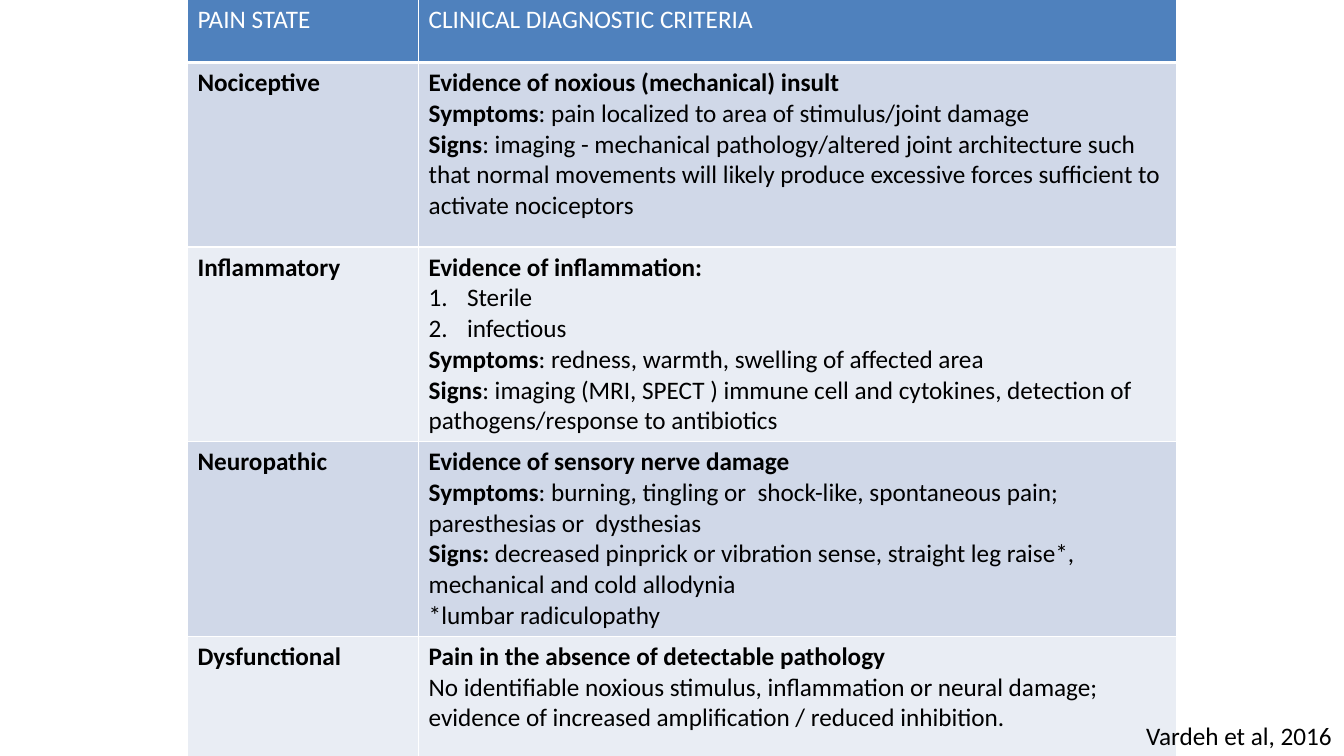
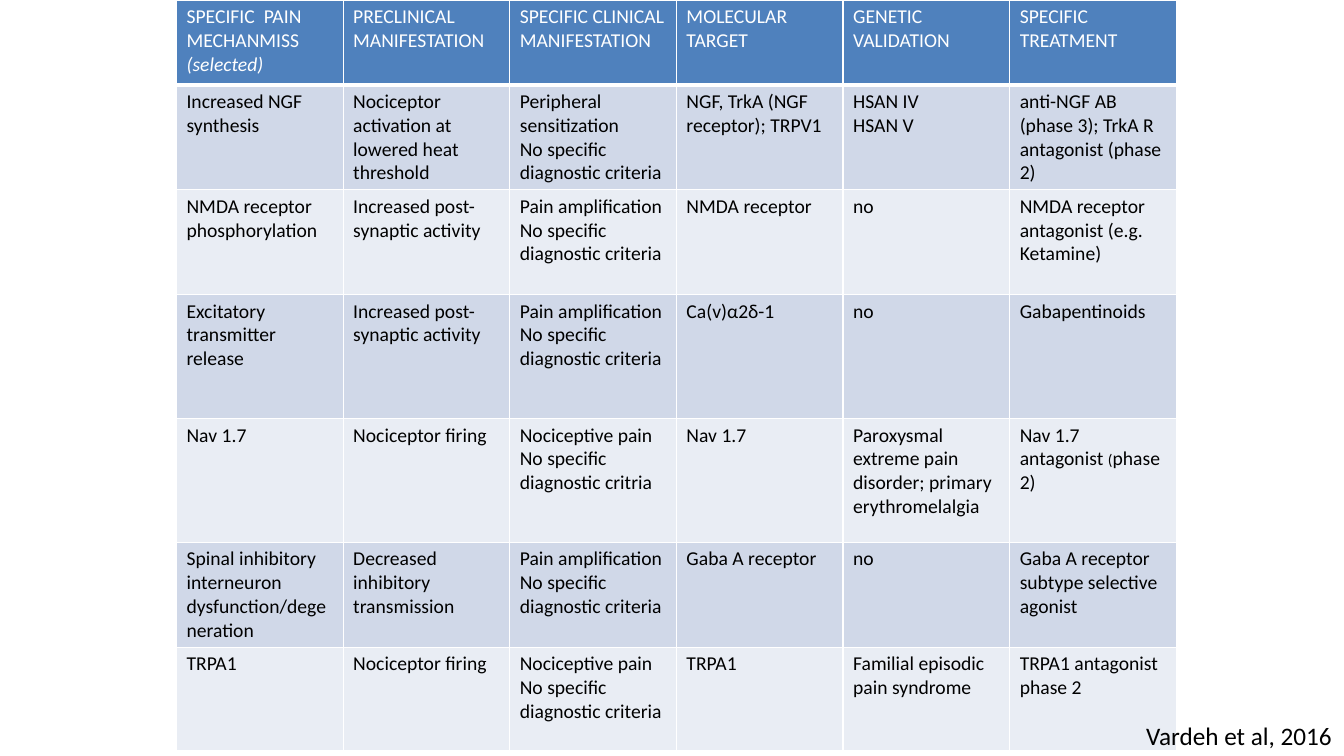
"""Build two slides of pain tables: diagnostic criteria and mechanisms."""
from lxml import etree
from pptx import Presentation
from pptx import util as u
from pptx.dml.color import RGBColor
from pptx.enum import text
from pptx.oxml import ns

COLORS = {"header": "4F81BD", "odd": "D0D8E8", "even": "E9EDF4",
          "rule": "FFFFFF", "header_text": "FFFFFF", "body_text": "000000"}
FONT = "Calibri"
WIDTH, HEIGHT = u.Inches(13.33), u.Inches(7.5)
BOLD, ITALIC, SMALL = {"bold": True}, {"italic": True}, {"size": u.Pt(11)}
NO_CRITERIA = "No specific diagnostic criteria"
AMPLIFICATION = ["Pain amplification", NO_CRITERIA]

CRITERIA = [
    ["PAIN STATE", "CLINICAL DIAGNOSTIC CRITERIA"],
    [[("Nociceptive", BOLD)], [
        ("Evidence of noxious (mechanical) insult", BOLD),
        [("Symptoms", BOLD), ": pain localized to area of stimulus/joint damage"],
        [("Signs", BOLD), ": imaging - mechanical pathology/altered joint architecture "
         "such that normal movements will likely produce excessive forces sufficient to "
         "activate nociceptors"]]],
    [[("Inflammatory", BOLD)], [
        ("Evidence of inflammation:", BOLD),
        ("Sterile", {"numbered": True}),
        ("infectious", {"numbered": True}),
        [("Symptoms", BOLD), ": redness, warmth, swelling of affected area"],
        [("Signs", BOLD), ": imaging (MRI, SPECT ) immune cell and cytokines, "
         "detection of pathogens/response to antibiotics"]]],
    [[("Neuropathic", BOLD)], [
        ("Evidence of sensory nerve damage", BOLD),
        [("Symptoms", BOLD), ": burning, tingling or  shock-like, spontaneous pain; "
         "paresthesias or  dysthesias"],
        [("Signs: ", BOLD), "decreased pinprick or vibration sense, "
         "straight leg raise*, mechanical and cold allodynia"],
        "*lumbar radiculopathy"]],
    [[("Dysfunctional", BOLD)], [
        ("Pain in the absence of detectable pathology", BOLD),
        "No identifiable noxious stimulus, inflammation or neural damage; "
        "evidence of increased amplification / reduced inhibition."]],
]

MECHANISMS = [
    [["SPECIFIC  PAIN MECHANMISS", ("(selected)", ITALIC)], "PRECLINICAL MANIFESTATION",
     "SPECIFIC CLINICAL MANIFESTATION", "MOLECULAR TARGET", "GENETIC VALIDATION",
     "SPECIFIC TREATMENT"],
    ["Increased NGF synthesis", "Nociceptor activation at lowered heat threshold",
     ["Peripheral sensitization", NO_CRITERIA], "NGF, TrkA (NGF receptor); TRPV1",
     ["HSAN IV", "HSAN V"], "anti-NGF AB (phase 3); TrkA R antagonist (phase 2)"],
    ["NMDA receptor phosphorylation", "Increased post-synaptic activity", AMPLIFICATION,
     "NMDA receptor", "no", "NMDA receptor antagonist (e.g. Ketamine)"],
    ["Excitatory transmitter release", "Increased post-synaptic activity",
     " ".join(AMPLIFICATION), "Ca(v)α2δ-1", "no", "Gabapentinoids"],
    ["Nav 1.7", "Nociceptor firing", ["Nociceptive pain", "No specific diagnostic critria"],
     "Nav 1.7", "Paroxysmal extreme pain disorder; primary erythromelalgia",
     [["Nav 1.7 antagonist ", ("(", SMALL), "phase 2)"]]],
    [["Spinal inhibitory", "interneuron dysfunction/degeneration"],
     "Decreased inhibitory transmission", AMPLIFICATION, "Gaba A receptor", "no",
     "Gaba A receptor subtype selective agonist"],
    ["TRPA1", "Nociceptor firing", ["Nociceptive pain", NO_CRITERIA], "TRPA1",
     "Familial episodic pain syndrome", "TRPA1 antagonist phase 2"],
]


def across(percent):
    """Turn a percentage of the slide width into a length."""
    return u.Emu(round(WIDTH * percent / 100))


def down(percent):
    """Turn a percentage of the slide height into a length."""
    return u.Emu(round(HEIGHT * percent / 100))


def style_font(font, size, color, bold=False, italic=False):
    """Set the face, size, colour and emphasis of a font."""
    font.name, font.size, font.bold, font.italic = FONT, size, bold, italic
    font.color.rgb = RGBColor.from_string(COLORS[color])


def number_paragraph(paragraph):
    """Number a paragraph with a hanging indent."""
    properties = paragraph._p.get_or_add_pPr()
    properties.set("marL", str(u.Inches(0.38)))
    properties.set("indent", str(-u.Inches(0.38)))
    numbering = etree.Element(ns.qn("a:buAutoNum"), type="arabicPeriod")
    properties.insert(0, numbering)


def write_line(paragraph, line, size, color):
    """Write one line, given as text, a styled text or a list of both."""
    if isinstance(line, list):
        style_font(paragraph.font, size, color)
        for part in line:
            words, emphasis = part if isinstance(part, tuple) else (part, {})
            run = paragraph.add_run()
            run.text = words
            for attribute, value in emphasis.items():
                setattr(run.font, attribute, value)
        return
    words, look = line if isinstance(line, tuple) else (line, {})
    paragraph.add_run().text = words
    emphasis = {key: value for key, value in look.items() if key != "numbered"}
    style_font(paragraph.font, size, color, **emphasis)
    if look.get("numbered"):
        number_paragraph(paragraph)


def rule_cell(cell, bottom):
    """Draw the four borders of a cell, with its own bottom width in points."""
    properties = cell._tc.get_or_add_tcPr()
    for side, points in (("L", 1), ("R", 1), ("T", 1), ("B", bottom)):
        border = etree.SubElement(properties, ns.qn(f"a:ln{side}"), w=str(u.Pt(points)))
        fill = etree.SubElement(border, ns.qn("a:solidFill"))
        etree.SubElement(fill, ns.qn("a:srgbClr"), val=COLORS["rule"])


def fill_cell(cell, content, row, size):
    """Give a cell its borders, band colour and lines of text."""
    rule_cell(cell, 1 if row else 3)
    band = ("even", "odd")[row % 2] if row else "header"
    cell.fill.solid()
    cell.fill.fore_color.rgb = RGBColor.from_string(COLORS[band])
    lines = content if isinstance(content, list) else [content]
    frame = cell.text_frame
    for index, line in enumerate(lines):
        paragraph = frame.add_paragraph() if index else frame.paragraphs[0]
        write_line(paragraph, line, size, "body_text" if row else "header_text")


def add_pain_table(slide, content, left, top, columns, rows, size):
    """Add a banded table whose lengths are percentages of the slide."""
    grid = slide.shapes.add_table(len(rows), len(columns), across(left), down(top),
                                  across(sum(columns)), down(sum(rows))).table
    for column, share in zip(grid.columns, columns):
        column.width = across(share)
    for row, share in zip(grid.rows, rows):
        row.height = down(share)
    for r, entries in enumerate(content):
        for c, entry in enumerate(entries):
            fill_cell(grid.cell(r, c), entry, r, u.Pt(size))


def add_citation(slide):
    """Add the source of the table in the lower right corner."""
    frame = slide.shapes.add_textbox(across(84.55), down(94.67),
                                     across(15.53), down(5.33)).text_frame
    frame.word_wrap = False
    frame.auto_size = text.MSO_AUTO_SIZE.SHAPE_TO_FIT_TEXT
    write_line(frame.paragraphs[0], "Vardeh et al, 2016", u.Pt(18), "body_text")


def main():
    """Build and save the presentation."""
    deck = Presentation()
    deck.slide_width, deck.slide_height = WIDTH, HEIGHT
    tables = [
        (CRITERIA, 13.95, -0.13, [17.2, 56.4], [8.4, 24.4, 24.8, 24.8, 16.53], 18),
        (MECHANISMS, 13.13, 0, [12.4] * 6,
         [11.2, 13.87, 13.87, 16.4, 16.4, 13.87, 13.73], 14),
    ]
    for table in tables:
        slide = deck.slides.add_slide(deck.slide_layouts[6])
        add_pain_table(slide, *table)
        add_citation(slide)
    deck.save("out.pptx")


if __name__ == "__main__":
    main()
